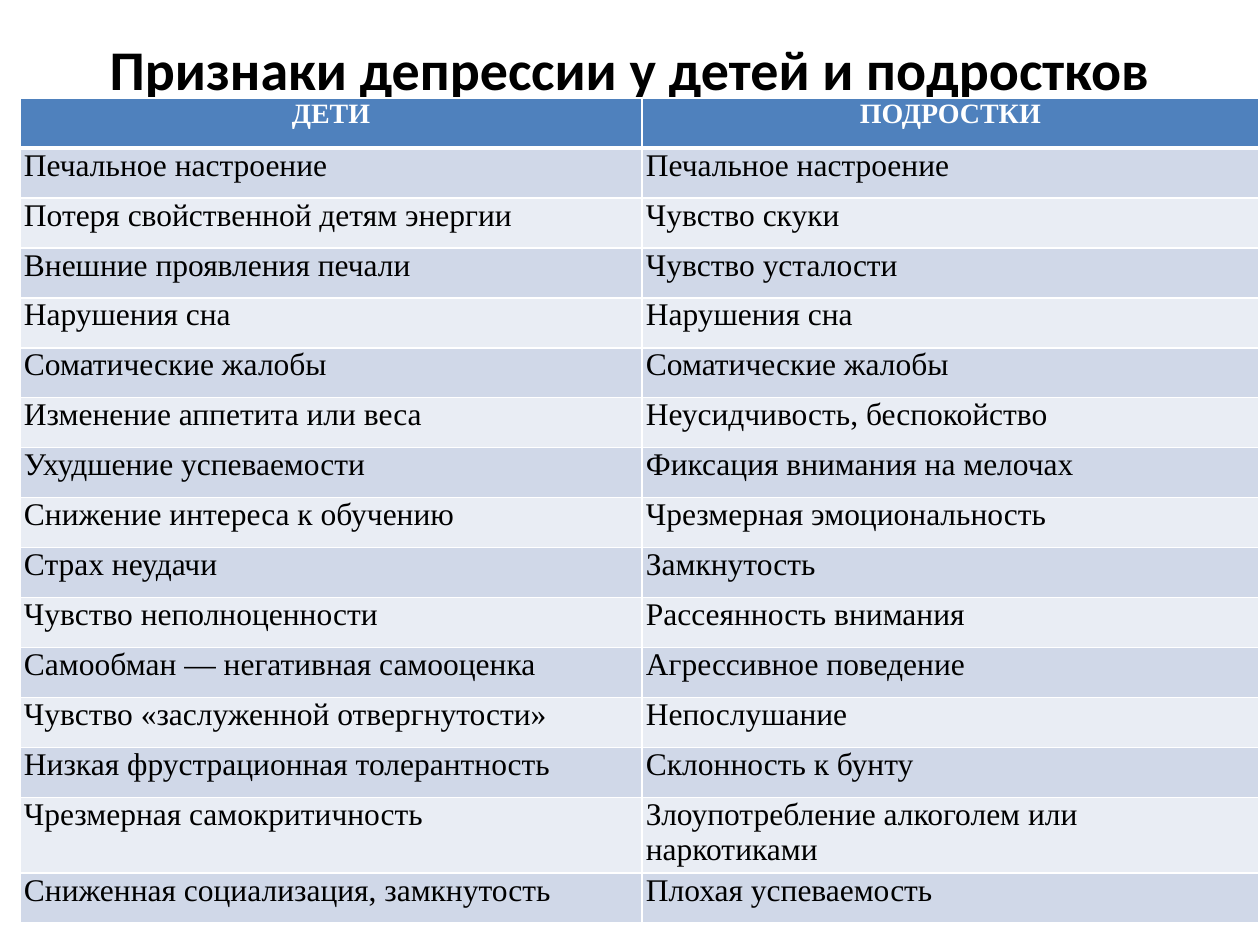
import pptx
import pptx.util
import pptx.dml.color
import pptx.enum.text
import pptx.oxml
import pptx.oxml.ns
import lxml.etree

PX = 914400 // 126  # slide is 1260 x 945 px

BLACK = pptx.dml.color.RGBColor(0x00, 0x00, 0x00)
WHITE = pptx.dml.color.RGBColor(0xFF, 0xFF, 0xFF)
HEADER_BLUE = pptx.dml.color.RGBColor(0x4F, 0x81, 0xBD)
BANDS = (pptx.dml.color.RGBColor(0xD0, 0xD8, 0xE8),
         pptx.dml.color.RGBColor(0xE9, 0xED, 0xF4))

CENTER = pptx.enum.text.PP_ALIGN.CENTER
LEFT = pptx.enum.text.PP_ALIGN.LEFT

TITLE = "Признаки депрессии у детей и подростков"
HEADINGS = ("ДЕТИ", "ПОДРОСТКИ")
SIGNS = [
    ("Печальное настроение", "Печальное настроение"),
    ("Потеря свойственной детям энергии", "Чувство скуки"),
    ("Внешние проявления печали", "Чувство усталости"),
    ("Нарушения сна", "Нарушения сна"),
    ("Соматические жалобы", "Соматические жалобы"),
    ("Изменение аппетита или веса", "Неусидчивость, беспокойство"),
    ("Ухудшение успеваемости", "Фиксация внимания на мелочах"),
    ("Снижение интереса к обучению", "Чрезмерная эмоциональность"),
    ("Страх неудачи", "Замкнутость"),
    ("Чувство неполноценности", "Рассеянность внимания"),
    ("Самообман — негативная самооценка", "Агрессивное поведение"),
    ("Чувство «заслуженной отвергнутости»", "Непослушание"),
    ("Низкая фрустрационная толерантность", "Склонность к бунту"),
    ("Чрезмерная самокритичность", "Злоупотребление алкоголем или наркотиками"),
    ("Сниженная социализация, замкнутость", "Плохая успеваемость"),
]
COLUMN_WIDTHS = (622, 617)
ROW_HEIGHT = 50
TALL_ROW, TALL_HEIGHT = 14, 75  # the row whose text takes two lines


def px(length):
    return pptx.util.Emu(length * PX)


def write(paragraph, text, font, size, color, bold, align):
    paragraph.alignment = align
    run = paragraph.add_run()
    run.text = text
    run.font.name = font
    run.font.size = pptx.util.Pt(size)
    run.font.color.rgb = color
    run.font.bold = bold


def add_title(slide):
    title = slide.shapes.add_textbox(px(63), px(38), px(1134), px(60))
    frame = title.text_frame
    frame.word_wrap = True
    frame.vertical_anchor = pptx.enum.text.MSO_ANCHOR.MIDDLE
    write(frame.paragraphs[0], TITLE, "Calibri", 32, BLACK, True, CENTER)


def set_borders(cell, top, bottom):
    """White rules on all four sides; widths in points."""
    properties = cell._tc.get_or_add_tcPr()
    sides = (("lnL", 1), ("lnR", 1), ("lnT", top), ("lnB", bottom))
    for place, (side, width) in enumerate(sides):
        line = lxml.etree.Element(pptx.oxml.ns.qn("a:" + side),
                                  w=str(pptx.util.Pt(width)))
        fill = lxml.etree.SubElement(line, pptx.oxml.ns.qn("a:solidFill"))
        lxml.etree.SubElement(fill, pptx.oxml.ns.qn("a:srgbClr"), val=str(WHITE))
        properties.insert(place, line)


def fill_cell(cell, text, row):
    header = row == 0
    cell.margin_left = cell.margin_right = px(4)
    cell.margin_top = cell.margin_bottom = 0
    cell.fill.solid()
    cell.fill.fore_color.rgb = HEADER_BLUE if header else BANDS[(row - 1) % 2]
    # The rule between heading and body is thicker
    set_borders(cell, top=3 if row == 1 else 1, bottom=3 if header else 1)
    write(cell.text_frame.paragraphs[0], text, "Times New Roman",
          16 if header else 18, WHITE if header else BLACK,
          header, CENTER if header else LEFT)


def add_signs_table(slide):
    rows = [HEADINGS] + SIGNS
    heights = [TALL_HEIGHT if row == TALL_ROW else ROW_HEIGHT
               for row in range(len(rows))]
    table = slide.shapes.add_table(
        len(rows), len(HEADINGS), px(20), px(98),
        px(sum(COLUMN_WIDTHS)), px(sum(heights))).table
    for column, width in zip(table.columns, COLUMN_WIDTHS):
        column.width = px(width)
    for row, texts in enumerate(rows):
        table.rows[row].height = px(heights[row])
        for column, text in enumerate(texts):
            fill_cell(table.cell(row, column), text, row)


def main():
    deck = pptx.Presentation()
    deck.slide_width, deck.slide_height = px(1260), px(945)
    slide = deck.slides.add_slide(deck.slide_layouts[6])
    add_title(slide)
    add_signs_table(slide)
    deck.save("out.pptx")


if __name__ == "__main__":
    main()
